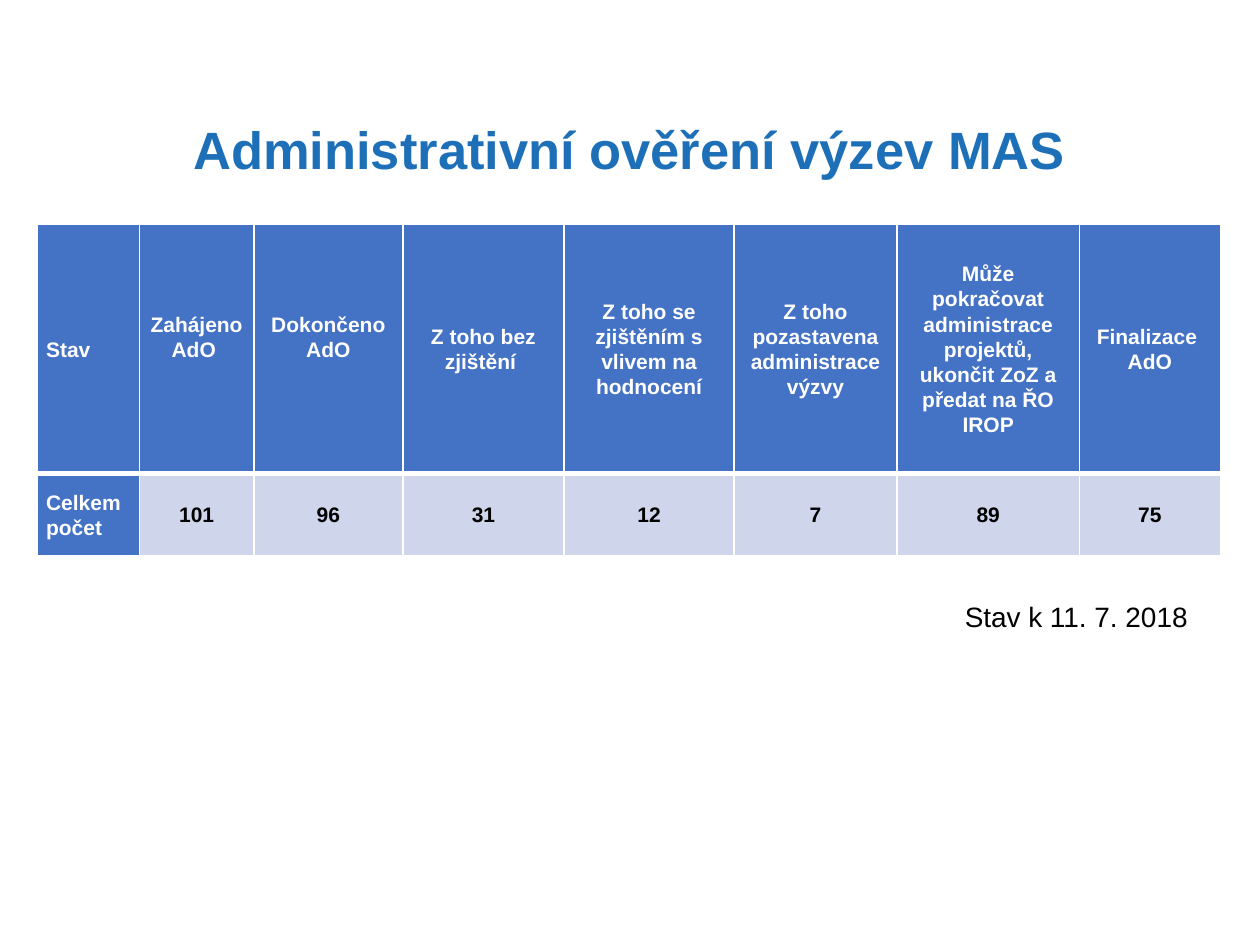
from dataclasses import dataclass

from lxml import etree
from pptx import Presentation
from pptx.dml.color import RGBColor
from pptx.enum.text import MSO_ANCHOR, MSO_AUTO_SIZE, PP_ALIGN
from pptx.oxml.ns import qn
from pptx.util import Cm, Pt

LEFT, MID = PP_ALIGN.LEFT, PP_ALIGN.CENTER
CENTRE = MSO_ANCHOR.MIDDLE
GROW = MSO_AUTO_SIZE.SHAPE_TO_FIT_TEXT


@dataclass(frozen=True)
class Theme:
    font: str = "Arial"
    title: str = "1D70B8"
    head: str = "4472C4"
    body: str = "CFD5EA"
    white: str = "FFFFFF"
    black: str = "000000"
    big: int = 30
    note: int = 16
    cell: int = 12
    thin: int = 1
    thick: int = 3


THEME = Theme()

COLS = [2.06, 2.31, 3, 3.25, 3.43, 3.28, 3.68, 2.84]
ROWS = [5.03, 1.65]
DATA = [
    ["Stav", "Zahájeno AdO ", "Dokončeno AdO", "Z toho bez zjištění ",
     "Z toho se zjištěním s vlivem na hodnocení",
     "Z toho pozastavena administrace výzvy",
     "Může pokračovat administrace projektů, ukončit ZoZ a předat na ŘO IROP",
     "Finalizace \vAdO"],
    ["Celkem počet", "101", "96", "31", "12", "7", "89", "75"],
]
RAISED = (1, 2)  # header columns whose text sits half a line higher


def write(frame, text, size, color, bold, align):
    frame.text = text
    par = frame.paragraphs[0]
    par.alignment = align
    for run in par.runs:
        font = run.font
        font.name, font.size, font.bold = THEME.font, Pt(size), bold
        font.color.rgb = RGBColor.from_string(color)
    return par


def add_text(slide, text, box, size, color, bold=False, align=LEFT):
    frame = slide.shapes.add_textbox(*map(Cm, box)).text_frame
    frame.word_wrap = True
    frame.auto_size = GROW
    write(frame, text, size, color, bold, align)


def add_edge(cell, side, width):
    props = cell._tc.get_or_add_tcPr()
    line = etree.SubElement(props, qn(f"a:ln{side}"), w=str(Pt(width)))
    fill = etree.SubElement(line, qn("a:solidFill"))
    etree.SubElement(fill, qn("a:srgbClr"), val=THEME.white)


def style_cell(cell, text, row, col):
    head = row == 0
    label = head or col == 0

    # Borders come before the fill; the rule under the header is thick
    rule = "B" if head else "T"
    for side in "LRTB":
        add_edge(cell, side, THEME.thick if side == rule else THEME.thin)
    cell.fill.solid()
    cell.fill.fore_color.rgb = RGBColor.from_string(
        THEME.head if label else THEME.body)

    # Text
    cell.margin_left = cell.margin_right = Cm(0.18)
    cell.margin_top = 0
    cell.margin_bottom = Cm(0.5) if head and col in RAISED else 0
    cell.vertical_anchor = CENTRE
    par = write(cell.text_frame, text, THEME.cell,
                THEME.white if label else THEME.black, True,
                MID if col else LEFT)
    par.line_spacing = 1.07


def add_grid(slide, left, top):
    table = slide.shapes.add_table(
        len(ROWS), len(COLS), Cm(left), Cm(top),
        Cm(sum(COLS)), Cm(sum(ROWS))).table
    for col, width in zip(table.columns, COLS):
        col.width = Cm(width)
    for row, height in zip(table.rows, ROWS):
        row.height = Cm(height)
    for r, line in enumerate(DATA):
        for c, text in enumerate(line):
            style_cell(table.cell(r, c), text, r, c)


def main():
    deck = Presentation()
    deck.slide_width, deck.slide_height = Cm(25.4), Cm(19.05)
    slide = deck.slides.add_slide(deck.slide_layouts[6])

    # Title
    add_text(slide, "Administrativní ověření výzev MAS",
             (1.78, 2.24, 21.82, 1.55), THEME.big, THEME.title, True, MID)
    # Status table
    add_grid(slide, 0.75, 4.52)
    # Date note
    add_text(slide, "Stav k 11. 7. 2018",
             (19.2, 11.96, 5.61, 0.94), THEME.note, THEME.black)

    deck.save("out.pptx")


if __name__ == "__main__":
    main()
